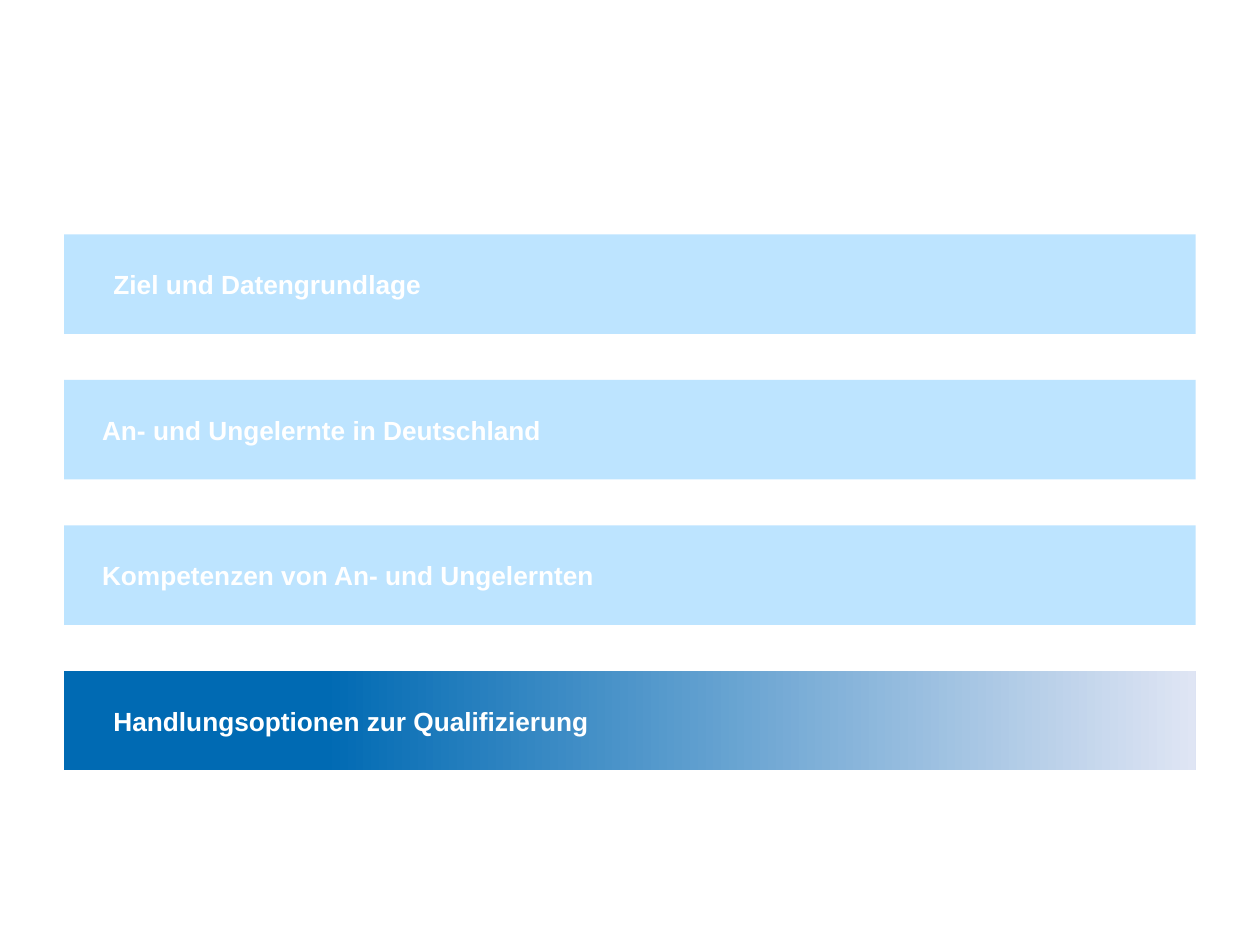
from pptx import Presentation
from pptx.dml.color import RGBColor
from pptx.enum.shapes import MSO_SHAPE
from pptx.enum.text import MSO_ANCHOR, PP_ALIGN
from pptx.util import Inches, Pt

RECTANGLE = MSO_SHAPE.RECTANGLE
MIDDLE = MSO_ANCHOR.MIDDLE
LEFT = PP_ALIGN.LEFT

PALE_BLUE = "BDE4FF"
ACTIVE_STOPS = [(0.23, "006AB3"), (1, "DFE5F4")]
BAR_LEFT, BAR_TOP, BAR_WIDTH, BAR_HEIGHT = 0.51, 1.86, 8.98, 0.79
BAR_PITCH = 1.155
WIDE_INSET, NARROW_INSET = 0.39, 0.3

AGENDA = [
    ("Ziel und Datengrundlage", WIDE_INSET, False),
    ("An- und Ungelernte in Deutschland", NARROW_INSET, False),
    ("Kompetenzen von An- und Ungelernten", NARROW_INSET, False),
    ("Handlungsoptionen zur Qualifizierung", WIDE_INSET, True),
]


def color(value):
    return RGBColor.from_string(value)


def fill_solid(shape, value):
    shape.fill.solid()
    shape.fill.fore_color.rgb = color(value)


def fill_gradient(shape, stops):
    shape.fill.gradient()
    shape.fill.gradient_angle = 0
    for stop, (position, value) in zip(shape.fill.gradient_stops, stops):
        stop.position = position
        stop.color.rgb = color(value)


def add_label(bar, text, inset):
    frame = bar.text_frame
    frame.word_wrap = True
    frame.vertical_anchor = MIDDLE
    frame.margin_left = Inches(inset)
    frame.margin_top = frame.margin_right = frame.margin_bottom = 0
    para = frame.paragraphs[0]
    para.alignment = LEFT
    span = para.add_run()
    span.text = text
    span.font.name = "Arial"
    span.font.size = Pt(15)
    span.font.bold = True
    span.font.color.rgb = color("FFFFFF")


def add_agenda_bar(page, top, text, inset, active):
    bar = page.shapes.add_shape(
        RECTANGLE, Inches(BAR_LEFT), Inches(top), Inches(BAR_WIDTH), Inches(BAR_HEIGHT)
    )
    bar.shadow.inherit = False
    bar.line.fill.background()
    if active:
        fill_gradient(bar, ACTIVE_STOPS)
    else:
        fill_solid(bar, PALE_BLUE)
    add_label(bar, text, inset)


def main():
    deck = Presentation()
    deck.slide_width = Inches(10)
    deck.slide_height = Inches(7.5)
    page = deck.slides.add_slide(deck.slide_layouts[6])
    for index, (text, inset, active) in enumerate(AGENDA):
        add_agenda_bar(page, BAR_TOP + index * BAR_PITCH, text, inset, active)
    deck.save("out.pptx")


if __name__ == "__main__":
    main()
